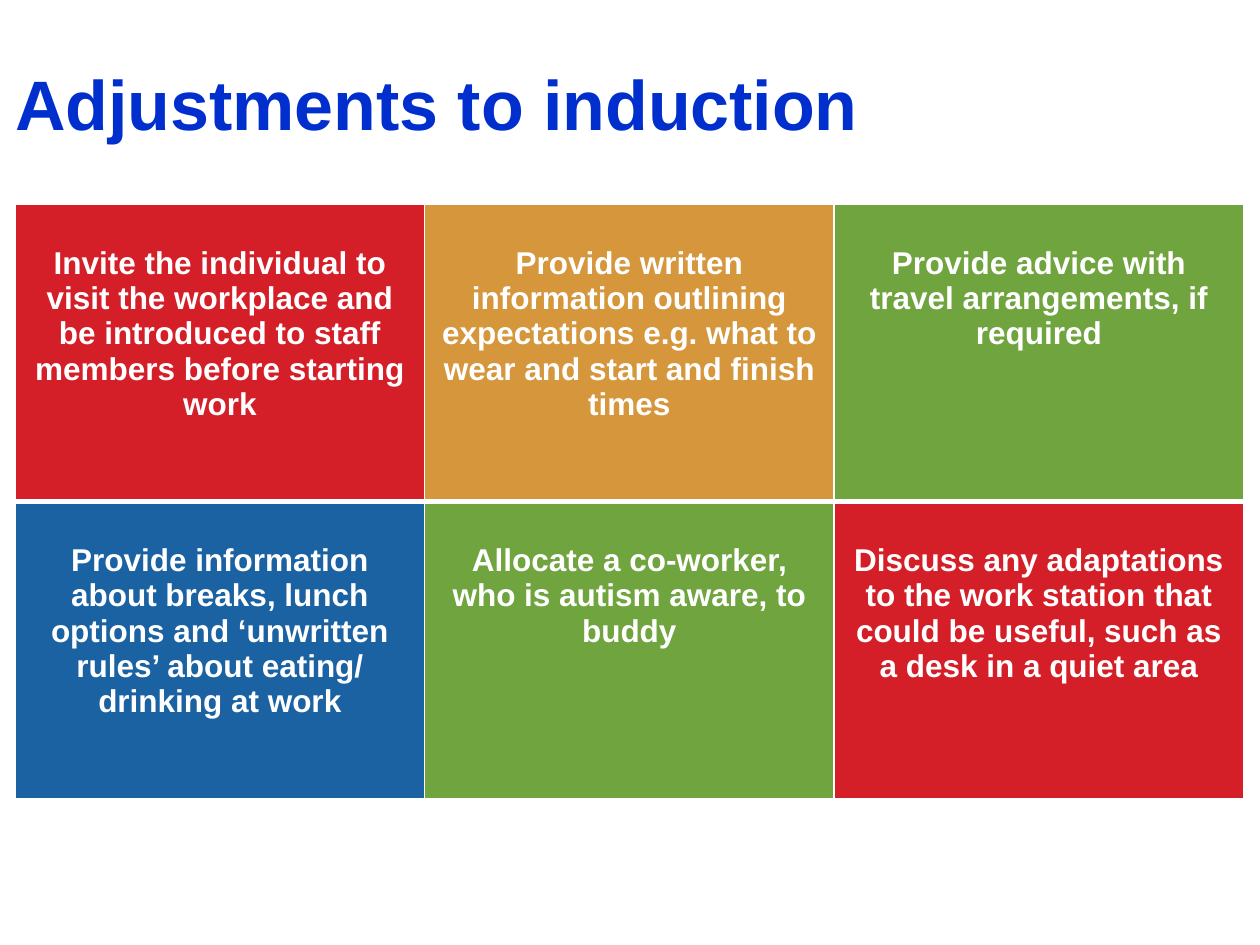
"""Build the slide of adjustments to a workplace induction."""
from lxml.etree import SubElement
from pptx import Presentation
from pptx.dml.color import RGBColor
from pptx.enum.text import MSO_ANCHOR, PP_ALIGN
from pptx.oxml.ns import qn
from pptx.util import Inches, Pt

TITLE_BLUE = RGBColor(0x00, 0x2F, 0xCD)
WHITE = RGBColor(0xFF, 0xFF, 0xFF)
RED = RGBColor(0xD4, 0x1F, 0x29)
AMBER = RGBColor(0xD5, 0x96, 0x3C)
GREEN = RGBColor(0x70, 0xA4, 0x3E)
BLUE = RGBColor(0x1A, 0x62, 0xA2)

ADJUSTMENTS = [
    [("Invite the individual to visit the workplace and be introduced to staff members before starting work", RED),
     ("Provide written information outlining expectations e.g. what to wear and start and finish times", AMBER),
     ("Provide advice with travel arrangements, if required", GREEN)],
    [("Provide information about breaks, lunch options and ‘unwritten rules’ about eating/ drinking at work", BLUE),
     ("Allocate a co-worker, who is autism aware, to buddy", GREEN),
     ("Discuss any adaptations to the work station that could be useful, such as a desk in a quiet area", RED)],
]


def write(frame, text, *, size, color, align):
    paragraph = frame.paragraphs[0]
    paragraph.alignment = align
    run = paragraph.add_run()
    run.text = text
    run.font.name = "Arial"
    run.font.size = Pt(size)
    run.font.bold = True
    run.font.color.rgb = color


def add_border(cell, side, width):
    line = SubElement(cell._tc.get_or_add_tcPr(), qn(f"a:{side}"), w=str(Pt(width)))
    SubElement(SubElement(line, qn("a:solidFill")), qn("a:srgbClr"), val=str(WHITE))


prs = Presentation()
prs.slide_width, prs.slide_height = Inches(10), Inches(7.5)
slide = prs.slides.add_slide(prs.slide_layouts[6])

heading = slide.shapes.add_textbox(Inches(0.12), Inches(0.46), Inches(8.5), Inches(0.69)).text_frame
heading.word_wrap = True
heading.vertical_anchor = MSO_ANCHOR.MIDDLE
heading.margin_left = heading.margin_right = heading.margin_bottom = 0
heading.margin_top = Inches(0.01)
write(heading, "Adjustments to induction", size=40, color=TITLE_BLUE, align=PP_ALIGN.LEFT)

grid = slide.shapes.add_table(2, 3, Inches(0.12), Inches(1.62), Inches(9.76), Inches(4.72)).table
for column in grid.columns:
    column.width = Inches(3.25)

for row, adjustments in enumerate(ADJUSTMENTS):
    for col, (advice, color) in enumerate(adjustments):
        cell = grid.cell(row, col)
        cell.margin_top = Inches(0.33)
        add_border(cell, "lnL", 1)
        add_border(cell, "lnR", 1)
        add_border(cell, "lnT", 3 if row == 1 else 1)
        add_border(cell, "lnB", 3 if row == 0 else 1)
        cell.fill.solid()
        cell.fill.fore_color.rgb = color
        write(cell.text_frame, advice, size=18, color=WHITE, align=PP_ALIGN.CENTER)

prs.save("out.pptx")
